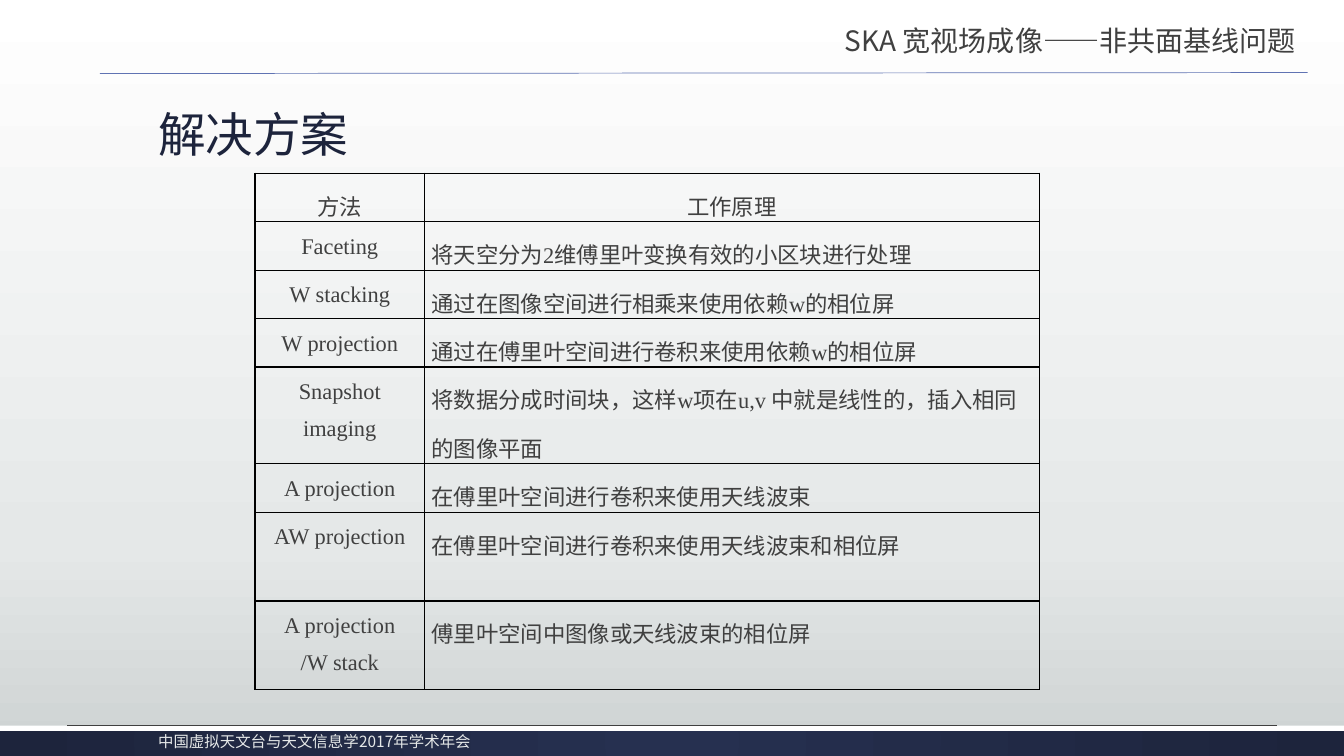
from dataclasses import dataclass

from lxml.etree import SubElement
from pptx import Presentation
from pptx.dml.color import RGBColor
from pptx.enum.shapes import MSO_CONNECTOR, MSO_SHAPE
from pptx.enum.text import MSO_ANCHOR as Anchor, PP_ALIGN as Align
from pptx.oxml.ns import qn
from pptx.util import Emu, Inches, Pt

SLIDE_W, SLIDE_H = Inches(13.33), Inches(7.5)

WHITE = RGBColor(0xFF, 0xFF, 0xFF)
MIST = RGBColor(0xE5, 0xE8, 0xE8)
SILVER = RGBColor(0xCD, 0xD2, 0xD2)
SLATE = RGBColor(0x26, 0x30, 0x50)
NAVY = RGBColor(0x1D, 0x24, 0x3C)
BLUE = RGBColor(0x60, 0x73, 0xB3)
GREY = RGBColor(0x40, 0x40, 0x40)
BLACK = RGBColor(0, 0, 0)

SANS = "Noto Sans CJK SC"
SERIF = "Times New Roman"


@dataclass(frozen=True)
class Box:
    """A place in percent of the slide's width and height."""
    left: float
    top: float
    width: float
    height: float

    def emu(self) -> tuple[Emu, Emu, Emu, Emu]:
        return across(self.left), down(self.top), across(self.width), down(self.height)


@dataclass(frozen=True)
class Label:
    text: str
    box: Box
    size: float
    color: RGBColor
    align: Align = Align.LEFT
    anchor: Anchor = Anchor.TOP
    spacing: float = 1.0


@dataclass(frozen=True)
class Rule:
    start: tuple[float, float]
    end: tuple[float, float]
    color: RGBColor


@dataclass(frozen=True)
class Method:
    name: str
    principle: str
    lines: int = 1


LABELS = [
    Label("解决方案", Box(11.03, 8.93, 78.02, 13.2), 34, NAVY,
          anchor=Anchor.BOTTOM, spacing=0.9),
    Label("SKA 宽视场成像——非共面基线问题", Box(51.46, 2.4, 45.69, 5.87), 20, GREY,
          align=Align.RIGHT),
    Label("中国虚拟天文台与天文信息学2017年学术年会", Box(11.03, 96.27, 58.74, 3.47), 11, MIST,
          anchor=Anchor.MIDDLE),
]
RULES = [
    Rule((7.43, 9.73), (97.3, 9.6), BLUE),
    Rule((5, 95.93), (95, 95.93), GREY),
]
METHODS = [
    Method("方法", "工作原理"),
    Method("Faceting", "将天空分为2维傅里叶变换有效的小区块进行处理"),
    Method("W stacking", "通过在图像空间进行相乘来使用依赖w的相位屏"),
    Method("W projection", "通过在傅里叶空间进行卷积来使用依赖w的相位屏"),
    Method("Snapshot imaging", "将数据分成时间块，这样w项在u,v 中就是线性的，插入相同的图像平面", 2),
    Method("A projection", "在傅里叶空间进行卷积来使用天线波束"),
    Method("AW projection", "在傅里叶空间进行卷积来使用天线波束和相位屏", 2),
    Method("A projection\n/W stack", "傅里叶空间中图像或天线波束的相位屏", 2),
]
TABLE_LEFT, TABLE_TOP = 18.98, 22.93
COLUMN_WIDTHS = (12.6, 45.76)
LINE_HEIGHT = 5.87


def across(percent: float) -> Emu:
    return Emu(round(SLIDE_W * percent / 100))


def down(percent: float) -> Emu:
    return Emu(round(SLIDE_H * percent / 100))


def set_gradient(owner, stops: list[tuple[int, RGBColor]], radial: bool = False) -> None:
    """Rewrite the gradient fill found inside an XML element."""
    gradient = next(owner.iter(qn("a:gradFill")))
    for child in list(gradient):
        gradient.remove(child)
    stop_list = SubElement(gradient, qn("a:gsLst"))
    for position, color in stops:
        stop = SubElement(stop_list, qn("a:gs"), pos=str(position * 1000))
        SubElement(stop, qn("a:srgbClr"), val=str(color))
    if radial:
        circle = SubElement(gradient, qn("a:path"), path="circle")
        SubElement(circle, qn("a:fillToRect"), l="50000", t="50000", r="50000", b="50000")
    else:
        SubElement(gradient, qn("a:lin"), ang="5400000", scaled="0")


def add_band(slide, box: Box):
    band = slide.shapes.add_shape(MSO_SHAPE.RECTANGLE, *box.emu())
    band.shadow.inherit = False
    band.line.fill.background()
    return band


def add_rule(slide, rule: Rule) -> None:
    line = slide.shapes.add_connector(
        MSO_CONNECTOR.STRAIGHT, across(rule.start[0]), down(rule.start[1]),
        across(rule.end[0]), down(rule.end[1]))
    line.line.color.rgb = rule.color
    line.line.width = Pt(0.5)
    SubElement(line._element.spPr, qn("a:effectLst"))


def format_text(frame, size: float, font: str, color: RGBColor,
                align: Align, spacing: float) -> None:
    for paragraph in frame.paragraphs:
        paragraph.alignment = align
        paragraph.line_spacing = spacing
        for run in paragraph.runs:
            run.font.size = Pt(size)
            run.font.name = font
            run.font.color.rgb = color
            SubElement(run.font._element, qn("a:ea"), typeface=SANS)


def add_label(slide, label: Label) -> None:
    frame = slide.shapes.add_textbox(*label.box.emu()).text_frame
    frame.word_wrap = True
    frame.vertical_anchor = label.anchor
    frame.text = label.text
    format_text(frame, label.size, SANS, label.color, label.align, label.spacing)


def add_borders(cell) -> None:
    properties = cell._tc.get_or_add_tcPr()
    for index, side in enumerate(("lnL", "lnR", "lnT", "lnB")):
        border = SubElement(properties, qn(f"a:{side}"), w=str(Pt(1)))
        fill = SubElement(border, qn("a:solidFill"))
        SubElement(fill, qn("a:srgbClr"), val=str(BLACK))
        properties.insert(index, border)


def fill_cell(cell, text: str, align: Align) -> None:
    cell.fill.background()
    cell.margin_left = cell.margin_right = Inches(0.07)
    cell.margin_top = cell.margin_bottom = 0
    cell.text_frame.text = text
    format_text(cell.text_frame, 16, SERIF, GREY, align, 1.5)
    add_borders(cell)


def add_method_table(slide) -> None:
    height = LINE_HEIGHT * sum(method.lines for method in METHODS)
    box = Box(TABLE_LEFT, TABLE_TOP, sum(COLUMN_WIDTHS), height)
    table = slide.shapes.add_table(len(METHODS), len(COLUMN_WIDTHS), *box.emu()).table
    table.first_row = table.horz_banding = False
    for column, width in zip(table.columns, COLUMN_WIDTHS):
        column.width = across(width)
    for index, method in enumerate(METHODS):
        table.rows[index].height = down(LINE_HEIGHT * method.lines)
        fill_cell(table.cell(index, 0), method.name, Align.CENTER)
        fill_cell(table.cell(index, 1), method.principle,
                  Align.LEFT if index else Align.CENTER)


def main() -> None:
    deck = Presentation()
    deck.slide_width, deck.slide_height = SLIDE_W, SLIDE_H
    slide = deck.slides.add_slide(deck.slide_layouts[6])
    slide.background.fill.gradient()
    set_gradient(slide.element, [(0, WHITE), (72, MIST), (100, SILVER)])

    footer_band = add_band(slide, Box(0, 96, 100, 4))
    footer_band.fill.gradient()
    set_gradient(footer_band._element.spPr, [(0, SLATE), (100, NAVY)], radial=True)
    footer_edge = add_band(slide, Box(0, 96, 100, 0.67))
    footer_edge.fill.solid()
    footer_edge.fill.fore_color.rgb = WHITE

    for rule in RULES:
        add_rule(slide, rule)
    add_method_table(slide)
    for label in LABELS:
        add_label(slide, label)
    deck.save("out.pptx")


if __name__ == "__main__":
    main()
